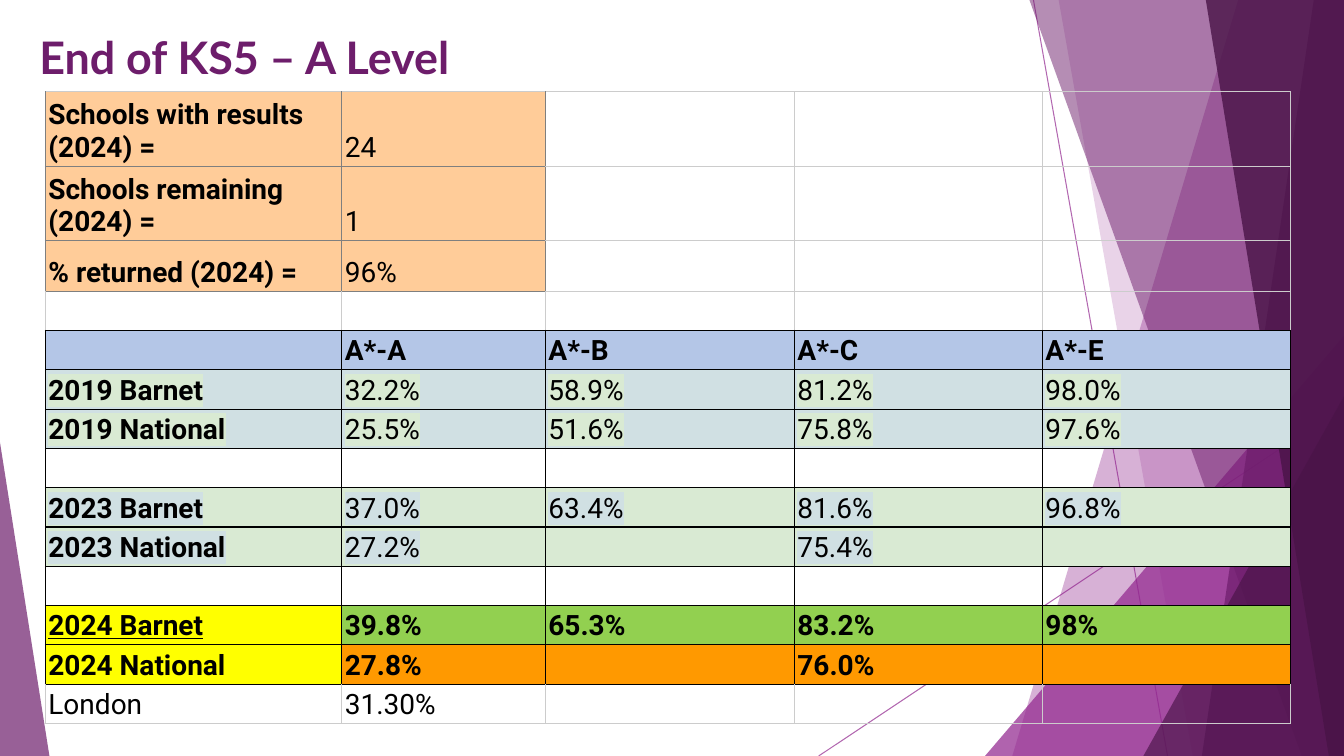
import dataclasses
import typing

import lxml.etree
import pptx
import pptx.dml.color
import pptx.enum.shapes
import pptx.enum.text
import pptx.oxml.ns
import pptx.util

Inches = pptx.util.Inches
Pt = pptx.util.Pt
qn = pptx.oxml.ns.qn


@dataclasses.dataclass(frozen=True)
class Theme:
    bright: str = "92278F"
    plum: str = "6D1D6B"
    dark: str = "491447"
    black: str = "000000"
    grey: str = "7F7F7F"
    light: str = "CCCCCC"
    title_font: str = "Lato"
    table_font: str = "Roboto"
    title_size: int = 32
    table_size: int = 20
    hairline: float = 0.75
    border: int = 1


class Box(typing.NamedTuple):
    left: float
    top: float
    width: float
    height: float


class Band(typing.NamedTuple):
    label_fill: str | None = None
    value_fill: str | None = None
    highlight: str | None = None
    border: str = "000000"
    bold_label: bool = True
    bold_values: bool = False
    underline: bool = False
    filled_columns: int = 5


THEME = Theme()
PAGE = Box(0, 0, 13.33, 7.5)
TITLE = Box(0.29, 0.13, 9.92, 0.76)
RESULTS = Box(0.45, 0.91, 12.35, 6.27)

LINES = [((10.25, 0), (11.58, 7.5)), ((13.33, 4.03), (8.12, 7.5))]
FACETS = [
    ("slant", (12.28, 10.04), THEME.bright, 36),
    ("slant", (10.5, 11.83), THEME.bright, 20),
    ("triangle", Box(9.77, 3.33, 3.56, 4.17), THEME.bright, 72),
    ("slant", (10.21, 12.91), THEME.plum, 50),
    ("slant", (13.03, 11.92), THEME.plum, 70),
    ("slant", (11.96, 13.18), THEME.dark, 80),
    ("triangle", Box(11.34, 3.93, 1.99, 3.57), THEME.dark, 66),
    ("triangle", Box(0, 4.39, 0.49, 3.11), THEME.plum, 70),
]

RETURNS = Band("FFCC99", "FFCC99", border=THEME.grey, filled_columns=2)
SPACER = Band(border=THEME.light)
GAP = Band()
HEADER = Band("B4C6E7", "B4C6E7", bold_values=True)
YEAR_2019 = Band("D0E0E3", "D0E0E3", "D9EAD3")
YEAR_2023 = Band("D9EAD3", "D9EAD3", "D0E0E3")
BARNET_2024 = Band("FFFF00", "92D050", bold_values=True, underline=True)
NATIONAL_2024 = Band("FFFF00", "FF9900", bold_values=True)
LONDON = Band(border=THEME.light, bold_label=False)

COLUMNS = [2.94, 2.02, 2.47, 2.46, 2.46]
RETURN_HEIGHTS = [0.74, 0.74, 0.5]
ROW_HEIGHT = 0.39
ROWS = [
    (RETURNS, ["Schools with results (2024) =", "24", "", "", ""]),
    (RETURNS, ["Schools remaining (2024) =", "1", "", "", ""]),
    (RETURNS, ["% returned (2024) =", "96%", "", "", ""]),
    (SPACER, [""] * 5),
    (HEADER, ["", "A*-A", "A*-B", "A*-C", "A*-E"]),
    (YEAR_2019, ["2019 Barnet", "32.2%", "58.9%", "81.2%", "98.0%"]),
    (YEAR_2019, ["2019 National", "25.5%", "51.6%", "75.8%", "97.6%"]),
    (GAP, [""] * 5),
    (YEAR_2023, ["2023 Barnet", "37.0%", "63.4%", "81.6%", "96.8%"]),
    (YEAR_2023, ["2023 National", "27.2%", "", "75.4%", ""]),
    (GAP, [""] * 5),
    (BARNET_2024, ["2024 Barnet", "39.8%", "65.3%", "83.2%", "98%"]),
    (NATIONAL_2024, ["2024 National", "27.8%", "", "76.0%", ""]),
    (LONDON, ["London", "31.30%", "", "", ""]),
]


def assign(target, values):
    for name, value in values.items():
        setattr(target, name, value)


def rgb(colour):
    return pptx.dml.color.RGBColor.from_string(colour)


def lengths(box):
    return [Inches(value) for value in box]


def set_alpha(element, percent):
    colour = next(element.iter(qn("a:srgbClr")))
    lxml.etree.SubElement(colour, qn("a:alpha"), val=str(percent * 1000))


def draw_facets(page, box):
    for start, end in LINES:
        points = [Inches(value) for x, y in (start, end) for value in (box.left + x, box.top + y)]
        line = page.shapes.add_connector(pptx.enum.shapes.MSO_CONNECTOR.STRAIGHT, *points)
        assign(line.line, {"width": Pt(THEME.hairline)})
        line.line.color.rgb = rgb(THEME.bright)
        properties = line.element.spPr
        set_alpha(properties, 70)
        lxml.etree.SubElement(properties, qn("a:effectLst"))
    right, bottom = box.left + box.width, box.top + box.height
    for kind, outline, colour, opacity in FACETS:
        if kind == "slant":
            upper, lower = (box.left + x for x in outline)
            builder = page.shapes.build_freeform(Inches(upper), Inches(box.top))
            corners = [(right, box.top), (right, bottom), (lower, bottom)]
            builder.add_line_segments([(Inches(x), Inches(y)) for x, y in corners])
            facet = builder.convert_to_shape()
        else:
            place = outline._replace(left=box.left + outline.left, top=box.top + outline.top)
            facet = page.shapes.add_shape(
                pptx.enum.shapes.MSO_SHAPE.ISOSCELES_TRIANGLE, *lengths(place))
            facet.adjustments[0] = 1 if outline.left else 0
        facet.shadow.inherit = False
        facet.fill.solid()
        facet.fill.fore_color.rgb = rgb(colour)
        set_alpha(facet.element.spPr, opacity)
        facet.line.fill.background()


def draw_title(page, box):
    title = page.shapes.title
    assign(title, dict(zip(("left", "top", "width", "height"), lengths(box))))
    assign(title.text_frame, {"word_wrap": True, "text": "End of KS5 – A Level",
                              "vertical_anchor": pptx.enum.text.MSO_ANCHOR.BOTTOM})
    para = title.text_frame.paragraphs[0]
    assign(para, {"alignment": pptx.enum.text.PP_ALIGN.LEFT, "line_spacing": 0.9})
    span = para.runs[0]
    assign(span.font, {"name": THEME.title_font, "size": Pt(THEME.title_size), "bold": True})
    span.font.color.rgb = rgb(THEME.plum)
    page.shapes.element.append(title.element)


def border_colour(row, column):
    if not (0 <= row < len(ROWS) and 0 <= column < len(COLUMNS)):
        return THEME.light
    band = ROWS[row][0]
    return band.border if column < band.filled_columns else THEME.light


def set_borders(cell, row, column):
    properties = cell._tc.get_or_add_tcPr()
    sides = {"a:lnL": (0, -1), "a:lnR": (0, 1), "a:lnT": (-1, 0), "a:lnB": (1, 0)}
    for position, (tag, (down, across)) in enumerate(sides.items()):
        darkest = min(border_colour(row, column), border_colour(row + down, column + across))
        colour = THEME.light if row + down < 0 else darkest
        edge = lxml.etree.Element(qn(tag), w=str(Pt(THEME.border)))
        fill = lxml.etree.SubElement(edge, qn("a:solidFill"))
        lxml.etree.SubElement(fill, qn("a:srgbClr"), val=colour)
        properties.insert(position, edge)


def fill_cell(cell, band, column, text):
    side, end = Inches(0.03), Inches(0.02)
    assign(cell, {"margin_left": side, "margin_right": side, "margin_top": end,
                  "margin_bottom": end, "vertical_anchor": pptx.enum.text.MSO_ANCHOR.BOTTOM})
    colour = band.value_fill if column else band.label_fill
    if colour and column < band.filled_columns:
        cell.fill.solid()
        cell.fill.fore_color.rgb = rgb(colour)
    else:
        cell.fill.background()
    if not text:
        return
    span = cell.text_frame.paragraphs[0].add_run()
    span.text = text
    assign(span.font, {"name": THEME.table_font, "size": Pt(THEME.table_size),
                       "bold": band.bold_values if column else band.bold_label,
                       "underline": band.underline and column == 0})
    span.font.color.rgb = rgb(THEME.black)
    if band.highlight:
        highlight = lxml.etree.Element(qn("a:highlight"))
        lxml.etree.SubElement(highlight, qn("a:srgbClr"), val=band.highlight)
        next(span.font._element.iter(qn("a:solidFill"))).addnext(highlight)


def draw_results(page, box):
    table = page.shapes.add_table(len(ROWS), len(COLUMNS), *lengths(box)).table
    assign(table, {"first_row": False, "horz_banding": False})
    for column, width in enumerate(COLUMNS):
        table.columns[column].width = Inches(width)
    for row, (band, texts) in enumerate(ROWS):
        height = RETURN_HEIGHTS[row] if band is RETURNS else ROW_HEIGHT
        table.rows[row].height = Inches(height)
        for column, text in enumerate(texts):
            cell = table.cell(row, column)
            fill_cell(cell, band, column, text)
            set_borders(cell, row, column)


def main():
    deck = pptx.Presentation()
    assign(deck, {"slide_width": Inches(PAGE.width), "slide_height": Inches(PAGE.height)})
    page = deck.slides.add_slide(deck.slide_layouts[5])
    draw_facets(page, PAGE)
    draw_title(page, TITLE)
    draw_results(page, RESULTS)
    deck.save("out.pptx")


if __name__ == "__main__":
    main()
